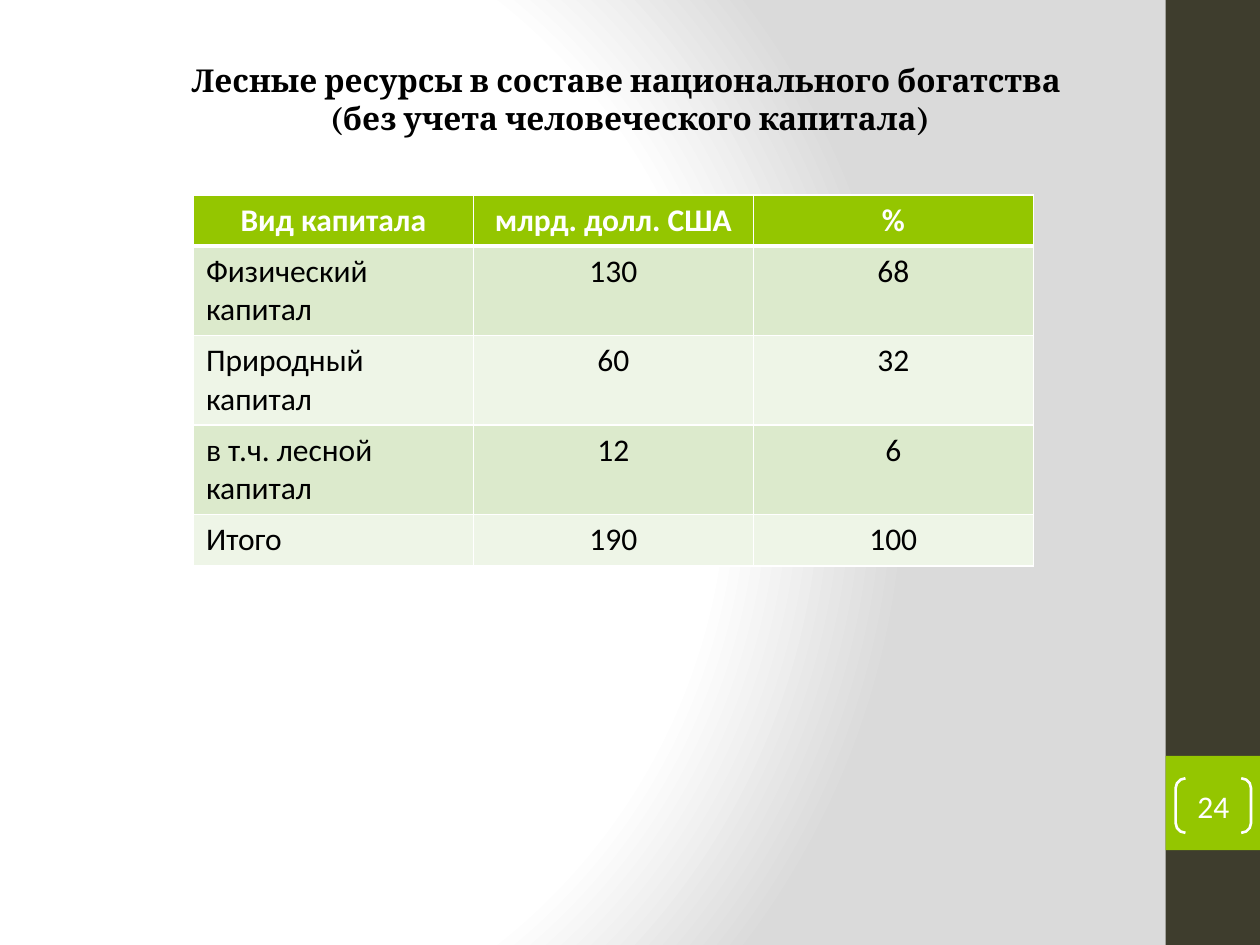
from dataclasses import dataclass

from lxml import etree
from pptx import Presentation
from pptx.dml.color import RGBColor
from pptx.enum.shapes import MSO_SHAPE
from pptx.enum.text import MSO_ANCHOR, MSO_AUTO_SIZE, PP_ALIGN
from pptx.oxml import parse_xml
from pptx.oxml.ns import nsdecls, qn
from pptx.util import Cm, Pt

RECT = MSO_SHAPE.RECTANGLE
BRACKET = MSO_SHAPE.DOUBLE_BRACKET
LEFT, CENTER = PP_ALIGN.LEFT, PP_ALIGN.CENTER
MIDDLE = MSO_ANCHOR.MIDDLE
GROW = MSO_AUTO_SIZE.SHAPE_TO_FIT_TEXT


@dataclass(frozen=True)
class Theme:
    white: str = "FFFFFF"
    black: str = "000000"
    grey: str = "DADADA"
    dark: str = "3E3D2D"
    green: str = "94C600"
    bands: tuple = ("DCEACC", "EEF5E7")
    body: str = "Calibri"
    head: str = "Cambria"
    size: int = 18
    thin: int = 1
    thick: int = 3


THEME = Theme()

TITLE = (
    "Лесные ресурсы в составе национального богатства ",
    "(без учета человеческого капитала)",
)
ROWS = (
    ("Вид капитала", "млрд. долл. США", "%"),
    ("Физический капитал", "130", "68"),
    ("Природный капитал", "60", "32"),
    ("в т.ч. лесной капитал", "12", "6"),
    ("Итого", "190", "100"),
)


def rgb(color):
    return RGBColor.from_string(color)


def style(para, color, face=THEME.body, bold=False, align=CENTER):
    para.alignment = align
    font = para.font
    font.name, font.size, font.bold = face, Pt(THEME.size), bold
    font.color.rgb = rgb(color)


def paint_back(slide):
    """Fill the background with a radial gradient, white to grey."""
    fill = slide.background.fill
    fill.gradient()
    old = slide.element.find(".//" + qn("a:gradFill"))
    stops = ((0, THEME.white), (75, THEME.white), (100, THEME.grey))
    marks = "".join(
        f'<a:gs pos="{pos * 1000}"><a:srgbClr val="{color}"/></a:gs>'
        for pos, color in stops
    )
    new = parse_xml(
        f'<a:gradFill {nsdecls("a")} rotWithShape="1"><a:gsLst>{marks}</a:gsLst>'
        '<a:path path="circle"><a:fillToRect l="20000" t="50000" '
        'r="100000" b="50000"/></a:path></a:gradFill>'
    )
    old.getparent().replace(old, new)


def add_block(slide, box, color):
    block = slide.shapes.add_shape(RECT, *map(Cm, box))
    block.shadow.inherit = False
    block.fill.solid()
    block.fill.fore_color.rgb = rgb(color)
    block.line.fill.background()


def add_title(slide, box, lines):
    frame = slide.shapes.add_textbox(*map(Cm, box)).text_frame
    frame.word_wrap = True
    frame.auto_size = GROW
    frame.text = "\n".join(lines)
    for para in frame.paragraphs:
        style(para, THEME.black, THEME.head, bold=True)


def add_edges(cell, top, bottom):
    """Draw white cell borders; top and bottom are widths in points."""
    props = cell._tc.get_or_add_tcPr()
    sides = (("L", THEME.thin), ("R", THEME.thin), ("T", top), ("B", bottom))
    for spot, (side, width) in enumerate(sides):
        line = etree.Element(qn(f"a:ln{side}"), w=str(Pt(width)))
        fill = etree.SubElement(line, qn("a:solidFill"))
        etree.SubElement(fill, qn("a:srgbClr"), val=THEME.white)
        props.insert(spot, line)


def fill_cell(cell, text, row, col):
    head = row == 0
    cell.text = text
    cell.fill.solid()
    cell.fill.fore_color.rgb = rgb(THEME.green if head else THEME.bands[(row - 1) % 2])
    style(
        cell.text_frame.paragraphs[0],
        THEME.white if head else THEME.black,
        bold=head,
        align=CENTER if head or col else LEFT,
    )
    add_edges(
        cell,
        top=THEME.thick if row == 1 else THEME.thin,
        bottom=THEME.thick if head else THEME.thin,
    )


def add_grid(slide, box, rows):
    shape = slide.shapes.add_table(len(rows), len(rows[0]), *map(Cm, box))
    for row, texts in enumerate(rows):
        for col, text in enumerate(texts):
            fill_cell(shape.table.cell(row, col), text, row, col)


def add_page(slide, box, number):
    """Add the slide number between two brackets."""
    mark = slide.shapes.add_shape(BRACKET, *map(Cm, box))
    mark.shadow.inherit = False
    mark.adjustments[0] = 0.18
    mark.fill.background()
    mark.line.color.rgb = rgb(THEME.white)
    mark.line.width = Pt(1.5)
    frame = mark.text_frame
    frame.margin_left = frame.margin_right = 0
    frame.margin_top = frame.margin_bottom = 0
    frame.vertical_anchor = MIDDLE
    frame.text = number
    style(frame.paragraphs[0], THEME.white)


def main():
    deck = Presentation()
    deck.slide_width, deck.slide_height = Cm(25.4), Cm(19.05)
    slide = deck.slides.add_slide(deck.slide_layouts[6])
    paint_back(slide)
    add_block(slide, (23.5, 0, 1.9, 19.05), THEME.dark)
    add_block(slide, (23.5, 15.24, 1.9, 1.9), THEME.green)
    add_grid(slide, (3.9, 3.93, 16.93, 5.15), ROWS)
    add_title(slide, (3.1, 1.11, 19.2, 1.8), TITLE)
    add_page(slide, (23.7, 15.69, 1.52, 1.1), "24")
    deck.save("out.pptx")


if __name__ == "__main__":
    main()
